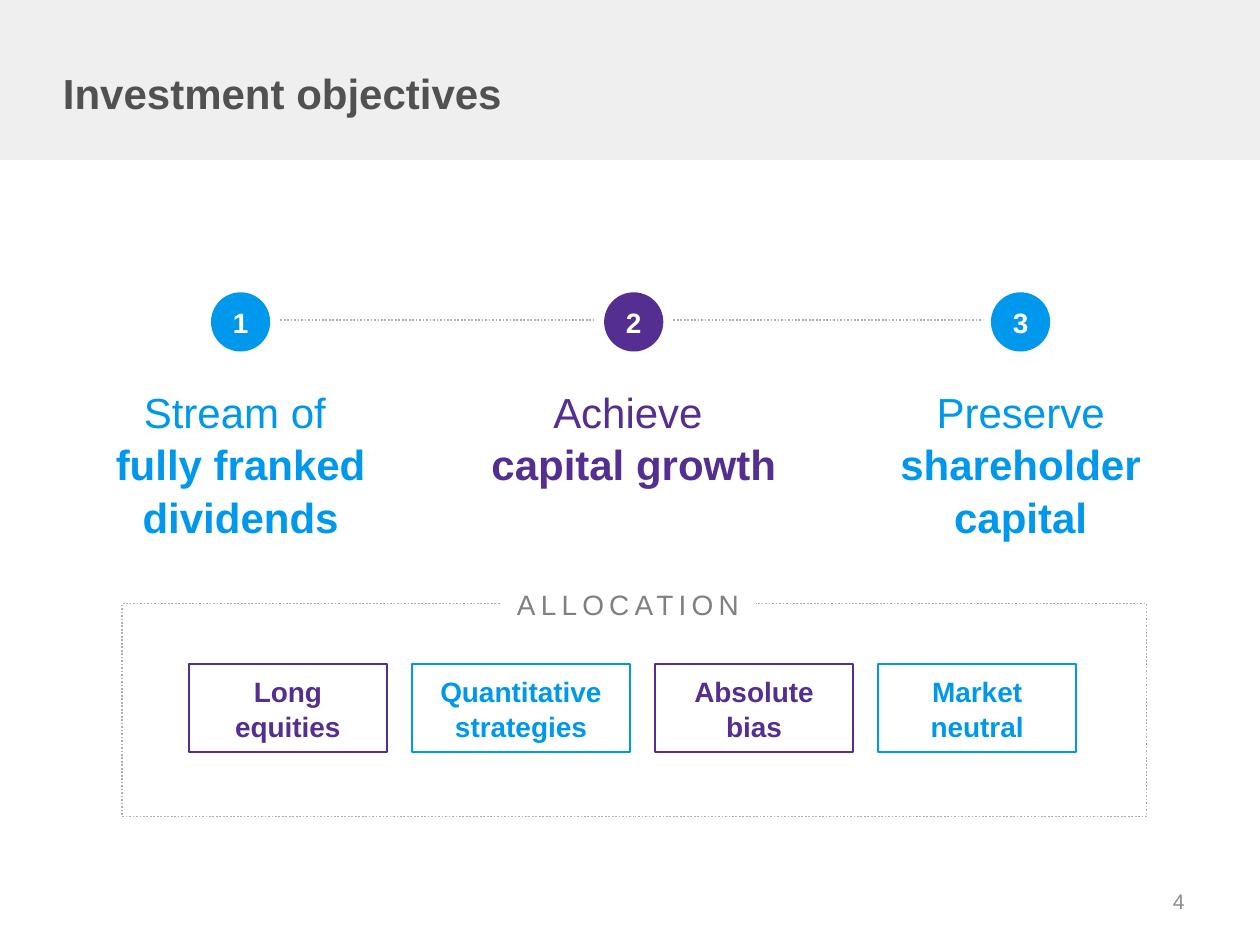
import pptx
import pptx.util
from lxml import etree
from pptx.dml.color import RGBColor
from pptx.enum.dml import MSO_LINE
from pptx.enum.shapes import MSO_CONNECTOR, MSO_SHAPE
from pptx.enum.text import MSO_ANCHOR, PP_ALIGN
from pptx.oxml.ns import qn

BLUE = RGBColor(0x00, 0x98, 0xEC)
PURPLE = RGBColor(0x54, 0x2E, 0x91)
BAND = RGBColor(0xEF, 0xEF, 0xEF)
DOTS = RGBColor(0xAF, 0xAF, 0xAF)
TITLE = RGBColor(0x51, 0x51, 0x51)
LABEL = RGBColor(0x80, 0x80, 0x80)
NUMBER = RGBColor(0x8C, 0x8C, 0x8C)
WHITE = RGBColor(0xFF, 0xFF, 0xFF)

# light words, bold words, break between them, colour, centre, width
OBJECTIVES = [
    ("Stream of ", "fully franked dividends", True, BLUE, 1.91, 2.34),
    ("Achieve ", "capital growth", True, PURPLE, 5.03, 2.35),
    ("Preserve ", "shareholder capital", False, BLUE, 8.1, 1.98),
]
# text, colour, width
ALLOCATIONS = [
    ("Long equities", PURPLE, 1.57),
    ("Quantitative strategies", BLUE, 1.73),
    ("Absolute bias", PURPLE, 1.57),
    ("Market neutral", BLUE, 1.57),
]
SLIDE_W, SLIDE_H = 10, 7.5
CIRCLE, CIRCLE_TOP, LINE_Y, LINE_GAP = 0.47, 2.32, 2.54, 0.08
CAPTION_TOP = 3.05
BOX_LEFT, BOX_TOP, BOX_H, BOX_GAP = 1.5, 5.27, 0.7, 0.2

prs = pptx.Presentation()
prs.slide_width = pptx.util.Inches(SLIDE_W)
prs.slide_height = pptx.util.Inches(SLIDE_H)
s = prs.slides.add_slide(prs.slide_layouts[6])


def inches(*values):
    return [pptx.util.Inches(v) for v in values]


def dotted(line):
    line.color.rgb = DOTS
    line.width = pptx.util.Pt(1)
    line.dash_style = MSO_LINE.ROUND_DOT


def add_shape(kind, *box, fill=None, line=None):
    sp = s.shapes.add_shape(kind, *inches(*box))
    sp.shadow.inherit = False
    if fill is None:
        sp.fill.background()
    else:
        sp.fill.solid()
        sp.fill.fore_color.rgb = fill
    if line is None:
        sp.line.fill.background()
    else:
        sp.line.color.rgb = line
        sp.line.width = pptx.util.Pt(1)
    return sp


def add_run(p, text, size, color, bold=False, spacing=None):
    r = p.add_run()
    r.text = text
    r.font.name = "Arial"
    r.font.size = pptx.util.Pt(size)
    r.font.bold = bold
    r.font.color.rgb = color
    if spacing:
        r.font._element.set("spc", str(spacing * 100))


def write(sp, text, size=16, color=WHITE, bold=False, align=PP_ALIGN.CENTER,
          anchor=MSO_ANCHOR.MIDDLE, inset=0, wrap=True, leading=None, spacing=None):
    """Set the text of a shape and return its paragraph."""
    tf = sp.text_frame
    tf.word_wrap = wrap
    tf.vertical_anchor = anchor
    tf.margin_left = tf.margin_right = pptx.util.Inches(inset)
    tf.margin_top = tf.margin_bottom = pptx.util.Inches(inset)
    p = tf.paragraphs[0]
    p.alignment = align
    if leading:
        p.line_spacing = leading
    add_run(p, text, size, color, bold, spacing)
    return p


def add_text(*box, text, **fmt):
    return write(s.shapes.add_textbox(*inches(*box)), text, **fmt)


add_shape(MSO_SHAPE.RECTANGLE, 0, 0, SLIDE_W, 1.27, fill=BAND)
add_text(0.5, 0.41, 6.67, 0.66, text="Investment objectives", size=24,
         color=TITLE, bold=True, align=PP_ALIGN.LEFT)
add_text(7.17, 6.95, 2.33, 0.4, text="4", size=12, color=NUMBER,
         align=PP_ALIGN.RIGHT, inset=0.1)

for i, (light, strong, broken, color, centre, width) in enumerate(OBJECTIVES):
    sp = add_shape(MSO_SHAPE.OVAL, centre - CIRCLE / 2, CIRCLE_TOP, CIRCLE, CIRCLE,
                   fill=color)
    write(sp, str(i + 1), bold=True)
    p = add_text(centre - width / 2, CAPTION_TOP, width, 1.21, text=light, size=24,
                 color=color, anchor=MSO_ANCHOR.TOP, leading=1.04)
    if broken:
        p.add_line_break()
    add_run(p, strong, 24, color, bold=True)

centres = [row[4] for row in OBJECTIVES]
reach = CIRCLE / 2 + LINE_GAP
for start, end in zip(centres, centres[1:]):
    link = s.shapes.add_connector(
        MSO_CONNECTOR.STRAIGHT, *inches(start + reach, LINE_Y, end - reach, LINE_Y))
    dotted(link.line)
    etree.SubElement(link._element.spPr, qn("a:effectLst"))

dotted(add_shape(MSO_SHAPE.RECTANGLE, 0.97, 4.79, 8.13, 1.69).line)
heading = add_shape(MSO_SHAPE.RECTANGLE, 3.97, 4.61, 2.03, 0.49, fill=WHITE)
write(heading, "ALLOCATION", color=LABEL, anchor=MSO_ANCHOR.TOP, inset=0.05,
      wrap=False, spacing=3)

left = BOX_LEFT
for text, color, width in ALLOCATIONS:
    sp = add_shape(MSO_SHAPE.RECTANGLE, left, BOX_TOP, width, BOX_H, line=color)
    write(sp, text, color=color, bold=True, inset=0.16, leading=1.04)
    left += width + BOX_GAP

prs.save("out.pptx")
